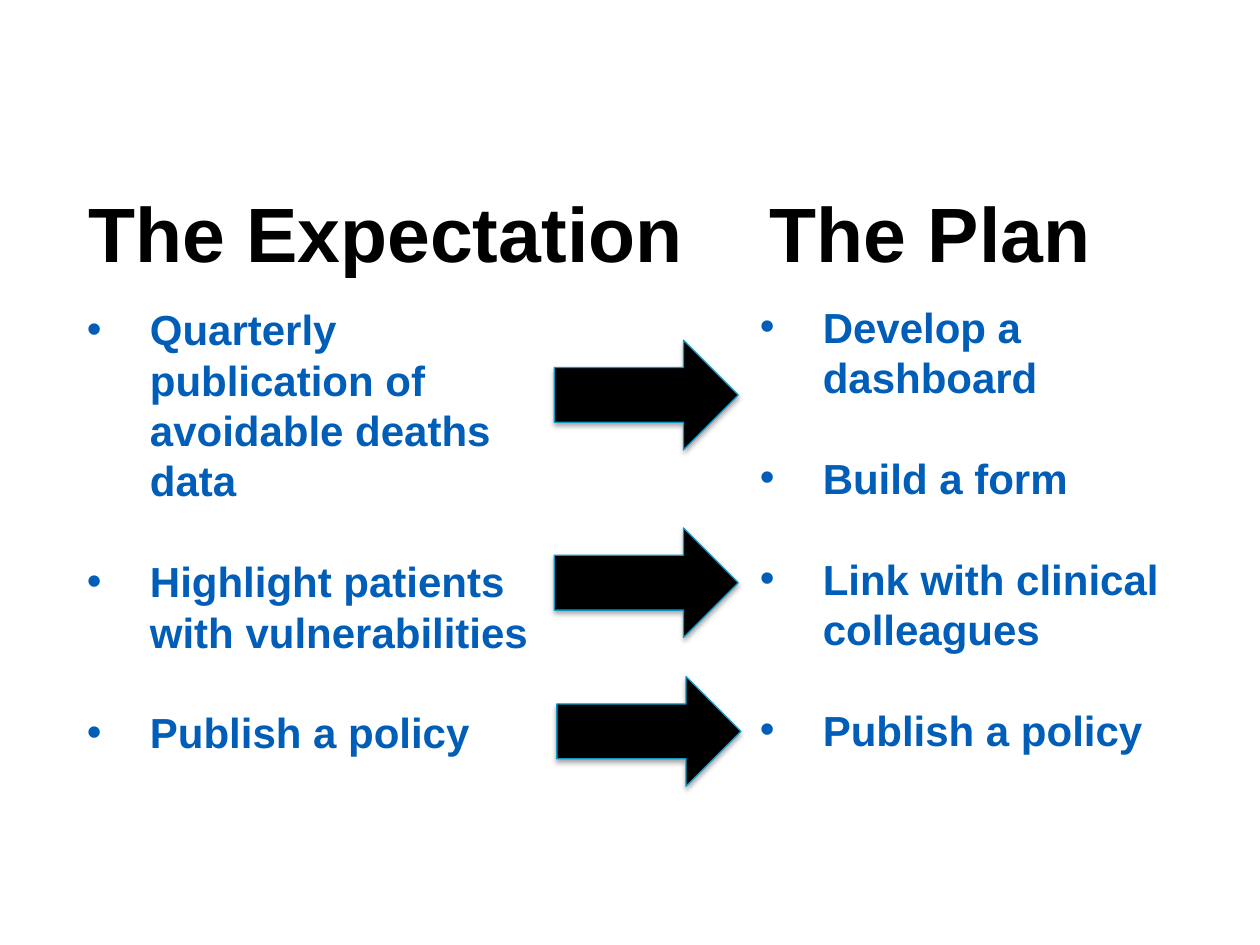
from dataclasses import dataclass

from lxml import etree
from pptx import Presentation
from pptx.dml.color import RGBColor
from pptx.enum.shapes import MSO_SHAPE
from pptx.enum.text import MSO_ANCHOR, PP_ALIGN
from pptx.oxml.ns import qn
from pptx.util import Inches, Pt

RIGHT_ARROW = MSO_SHAPE.RIGHT_ARROW
MIDDLE = MSO_ANCHOR.MIDDLE
LEFT = PP_ALIGN.LEFT
TITLE_ONLY = 5


@dataclass(frozen=True)
class Theme:
    font: str = "Arial"
    heading_color: RGBColor = RGBColor(0x00, 0x00, 0x00)
    body_color: RGBColor = RGBColor(0x00, 0x5E, 0xB8)
    arrow_fill: RGBColor = RGBColor(0x00, 0x00, 0x00)
    arrow_line: RGBColor = RGBColor(0x0E, 0x97, 0xC5)
    heading_size: float = 44
    body_size: float = 24
    line_factor: float = 1.2


class SlideBuilder:
    def __init__(self, prs, theme):
        self.theme = theme
        self.s = prs.slides.add_slide(prs.slide_layouts[TITLE_ONLY])

    def _frame(self, sp):
        tf = sp.text_frame
        tf.word_wrap = True
        tf.vertical_anchor = MIDDLE
        tf.margin_left = tf.margin_right = tf.margin_top = tf.margin_bottom = 0
        return tf

    def _write(self, p, text, size, color):
        p.alignment = LEFT
        p.line_spacing = Pt(size * self.theme.line_factor)
        r = p.add_run()
        r.text = text
        r.font.name = self.theme.font
        r.font.size = Pt(size)
        r.font.bold = True
        r.font.color.rgb = color

    def _textbox(self, left, top, width, height):
        return self.s.shapes.add_textbox(
            Inches(left), Inches(top), Inches(width), Inches(height))

    def _heading_text(self, sp, text):
        p = self._frame(sp).paragraphs[0]
        self._write(p, text, self.theme.heading_size, self.theme.heading_color)

    def title(self, text, left, top, width, height):
        sp = self.s.shapes.title
        sp.left, sp.top = Inches(left), Inches(top)
        sp.width, sp.height = Inches(width), Inches(height)
        self._heading_text(sp, text)

    def heading(self, text, left, top, width, height):
        self._heading_text(self._textbox(left, top, width, height), text)

    def bullets(self, items, left, top, width, height):
        size = self.theme.body_size
        tf = self._frame(self._textbox(left, top, width, height))
        for i, text in enumerate(items):
            p = tf.paragraphs[0] if i == 0 else tf.add_paragraph()
            pPr = p._p.get_or_add_pPr()
            pPr.set("marL", str(Inches(0.5)))
            pPr.set("indent", str(Inches(-0.5)))
            etree.SubElement(pPr, qn("a:buFont"), typeface=self.theme.font)
            etree.SubElement(pPr, qn("a:buChar"), char="•")
            if i:
                # One empty line's worth of space between items
                p.space_before = Pt(size * self.theme.line_factor)
            self._write(p, text, size, self.theme.body_color)

    def arrow(self, left, top, width=1.46, height=0.87):
        sp = self.s.shapes.add_shape(
            RIGHT_ARROW, Inches(left), Inches(top), Inches(width), Inches(height))
        sp.fill.solid()
        sp.fill.fore_color.rgb = self.theme.arrow_fill
        sp.line.color.rgb = self.theme.arrow_line
        sp.line.width = Pt(0.75)
        # Soft shadow straight below
        sp.shadow.inherit = False
        effects = sp._element.spPr.find(qn("a:effectLst"))
        shadow = etree.SubElement(
            effects, qn("a:outerShdw"), blurRad=str(Pt(3.1)), dist=str(Pt(1.8)),
            dir="5400000", rotWithShape="0")
        color = etree.SubElement(shadow, qn("a:srgbClr"), val="000000")
        etree.SubElement(color, qn("a:alpha"), val="35000")


def main():
    prs = Presentation()
    prs.slide_width, prs.slide_height = Inches(10), Inches(7.5)
    slide = SlideBuilder(prs, Theme())

    # Column headings
    slide.title("The Expectation", 0.7, 1.47, 5.03, 0.74)
    slide.heading("The Plan", 6.11, 1.47, 3.69, 0.74)

    # Expectations and the matching plan
    slide.bullets(["Quarterly publication of avoidable deaths data",
                   "Highlight patients with vulnerabilities",
                   "Publish a policy"], 0.69, 2.39, 3.69, 3.64)
    slide.bullets(["Develop a dashboard",
                   "Build a form",
                   "Link with clinical colleagues",
                   "Publish a policy"], 6.03, 2.37, 3.69, 3.64)

    # Arrows from expectation to plan
    for left, top in [(4.4, 2.7), (4.4, 4.19), (4.42, 5.37)]:
        slide.arrow(left, top)

    prs.save("out.pptx")


if __name__ == "__main__":
    main()
